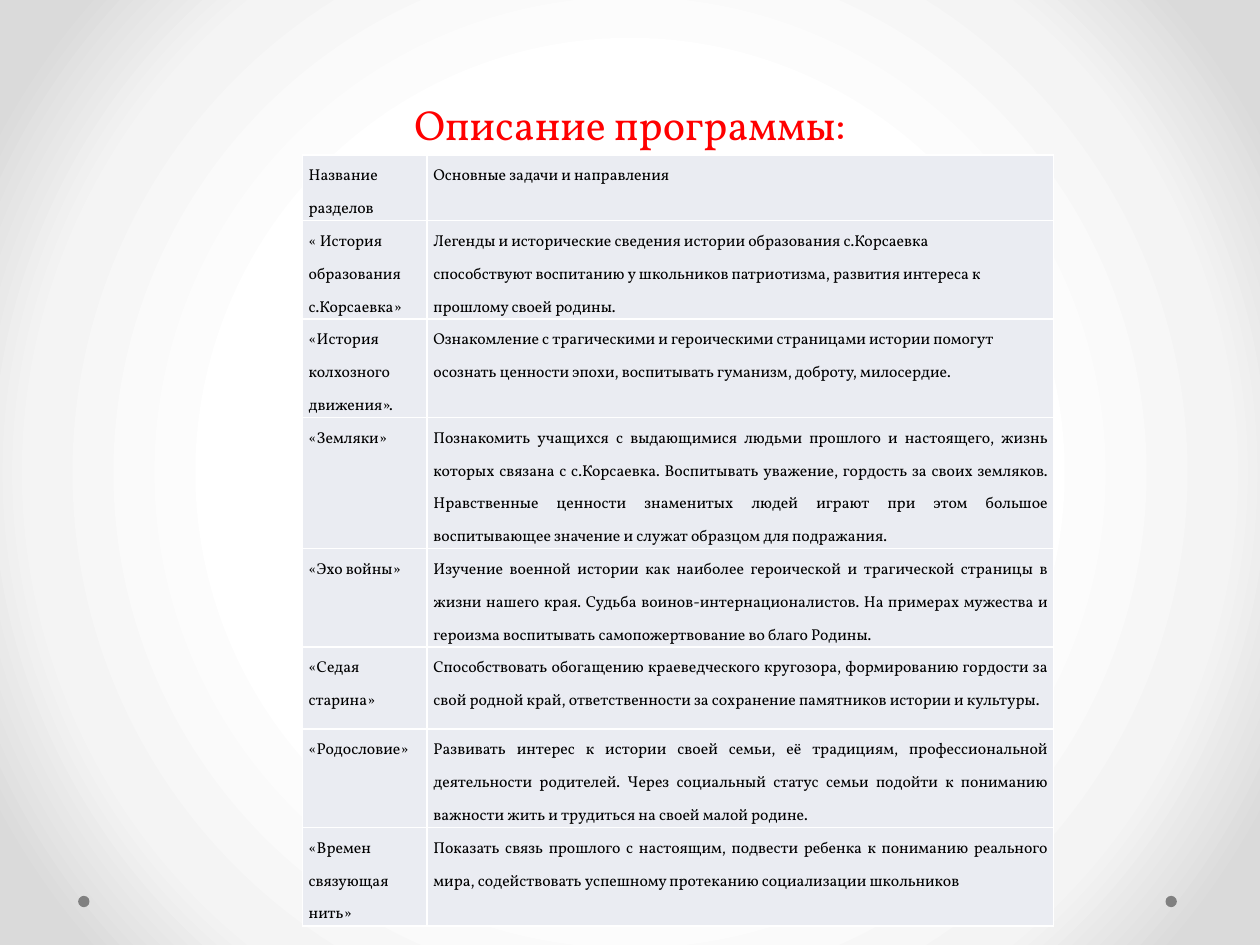
from lxml import etree
from pptx import Presentation
from pptx.dml.color import RGBColor
from pptx.enum.shapes import MSO_SHAPE
from pptx.enum.text import MSO_ANCHOR, PP_ALIGN
from pptx.oxml import parse_xml
from pptx.oxml.ns import nsdecls, qn
from pptx.util import Inches, Pt

OVAL = MSO_SHAPE.OVAL
BOTTOM, TOP = MSO_ANCHOR.BOTTOM, MSO_ANCHOR.TOP
LEFT, CENTER, JUSTIFY = PP_ALIGN.LEFT, PP_ALIGN.CENTER, PP_ALIGN.JUSTIFY

FONT = "Vollkorn"
COLORS = {
    "title": "FF0000",
    "text": "000000",
    "cell": "EAECF2",
    "border": "FFFFFF",
    "dot": "808080",
}
BACKGROUND_STOPS = [(50, "FFFFFF"), (76, "F4F4F4"), (92, "DADADA")]
COLUMN_WIDTHS = [0.99, 4.97]

SECTIONS = [
    (0.43, JUSTIFY, "Название разделов", "Основные задачи и направления"),
    (0.65, LEFT, "« История образования с.Корсаевка»",
     "Легенды и исторические сведения истории образования с.Корсаевка\v"
     "способствуют воспитанию у школьников патриотизма, развития интереса к "
     "прошлому своей родины."),
    (0.65, LEFT, "«История колхозного движения».",
     "Ознакомление с трагическими и героическими страницами истории помогут "
     "осознать ценности эпохи, воспитывать гуманизм, доброту, милосердие."),
    (0.86, JUSTIFY, "«Земляки»",
     "Познакомить учащихся с выдающимися людьми прошлого и настоящего, жизнь "
     "которых связана с с.Корсаевка. Воспитывать уважение, гордость за своих "
     "земляков. Нравственные ценности знаменитых людей играют при этом большое "
     "воспитывающее значение и служат образцом для подражания."),
    (0.65, JUSTIFY, "«Эхо войны»",
     "Изучение военной истории как наиболее героической и трагической страницы в "
     "жизни нашего края. Судьба воинов-интернационалистов. На примерах мужества и "
     "героизма воспитывать самопожертвование во благо Родины."),
    (0.65, JUSTIFY, "«Седая старина»",
     "Способствовать обогащению краеведческого кругозора, формированию гордости за "
     "свой родной край, ответственности за сохранение памятников истории и культуры."),
    (0.65, JUSTIFY, "«Родословие»",
     "Развивать интерес к истории своей семьи, её традициям, профессиональной "
     "деятельности родителей. Через социальный статус семьи подойти к пониманию "
     "важности жить и трудиться на своей малой родине."),
    (0.43, JUSTIFY, "«Времен связующая нить»",
     "Показать связь прошлого с настоящим, подвести ребенка к пониманию реального "
     "мира, содействовать успешному протеканию социализации школьников"),
]


def color(name):
    return RGBColor.from_string(COLORS[name])


def set_background(page):
    stops = "".join(
        f'<a:gs pos="{position * 1000}"><a:srgbClr val="{value}"/></a:gs>'
        for position, value in BACKGROUND_STOPS
    )
    background = parse_xml(
        f'<p:bg {nsdecls("p", "a")}><p:bgPr><a:gradFill rotWithShape="1">'
        f'<a:gsLst>{stops}</a:gsLst><a:path path="circle">'
        '<a:fillToRect l="50000" t="50000" r="50000" b="50000"/></a:path>'
        '</a:gradFill><a:effectLst/></p:bgPr></p:bg>'
    )
    page.element.cSld.insert(0, background)


def add_dot(page, left):
    dot = page.shapes.add_shape(
        OVAL, Inches(left), Inches(7.11), Inches(0.09), Inches(0.09))
    dot.shadow.inherit = False
    dot.fill.solid()
    dot.fill.fore_color.rgb = color("dot")
    dot.line.fill.background()


def format_paragraph(para, size, color_name, alignment, spacing):
    para.alignment = alignment
    para.line_spacing = spacing
    for span in para.runs:
        span.font.name = FONT
        span.font.size = Pt(size)
        span.font.color.rgb = color(color_name)


def set_title(page, text):
    title = page.shapes.title
    title.left, title.top = Inches(0.5), Inches(0.44)
    title.width, title.height = Inches(9), Inches(0.79)
    frame = title.text_frame
    frame.text = text
    frame.vertical_anchor = BOTTOM
    format_paragraph(frame.paragraphs[0], 24, "title", CENTER, Pt(58))


def set_borders(cell):
    properties = cell._tc.get_or_add_tcPr()
    for index, side in enumerate(("a:lnL", "a:lnR", "a:lnT", "a:lnB")):
        line = etree.Element(qn(side), w=str(Pt(1)))
        fill = etree.SubElement(line, qn("a:solidFill"))
        etree.SubElement(fill, qn("a:srgbClr"), val=COLORS["border"])
        properties.insert(index, line)


def fill_cell(cell, text, alignment):
    cell.text_frame.text = text
    cell.margin_left = cell.margin_right = Inches(0.05)
    cell.margin_top = cell.margin_bottom = 0
    cell.vertical_anchor = TOP
    cell.fill.solid()
    cell.fill.fore_color.rgb = color("cell")
    set_borders(cell)
    format_paragraph(cell.text_frame.paragraphs[0], 9, "text", alignment, 1.5)


def add_sections_table(page):
    table = page.shapes.add_table(
        len(SECTIONS), len(COLUMN_WIDTHS),
        Inches(2.4), Inches(1.23), Inches(5.96), Inches(5.4)).table
    table.first_row = False
    table.horz_banding = False
    for column, width in zip(table.columns, COLUMN_WIDTHS):
        column.width = Inches(width)
    for row, (height, alignment, *texts) in zip(table.rows, SECTIONS):
        row.height = Inches(height)
        for cell, text in zip(row.cells, texts):
            fill_cell(cell, text, alignment)


def main():
    deck = Presentation()
    deck.slide_width, deck.slide_height = Inches(10), Inches(7.5)
    page = deck.slides.add_slide(deck.slide_layouts[5])
    set_background(page)
    for left in (9.25, 0.62):
        add_dot(page, left)
    set_title(page, "Описание программы:")
    add_sections_table(page)
    deck.save("out.pptx")


if __name__ == "__main__":
    main()
